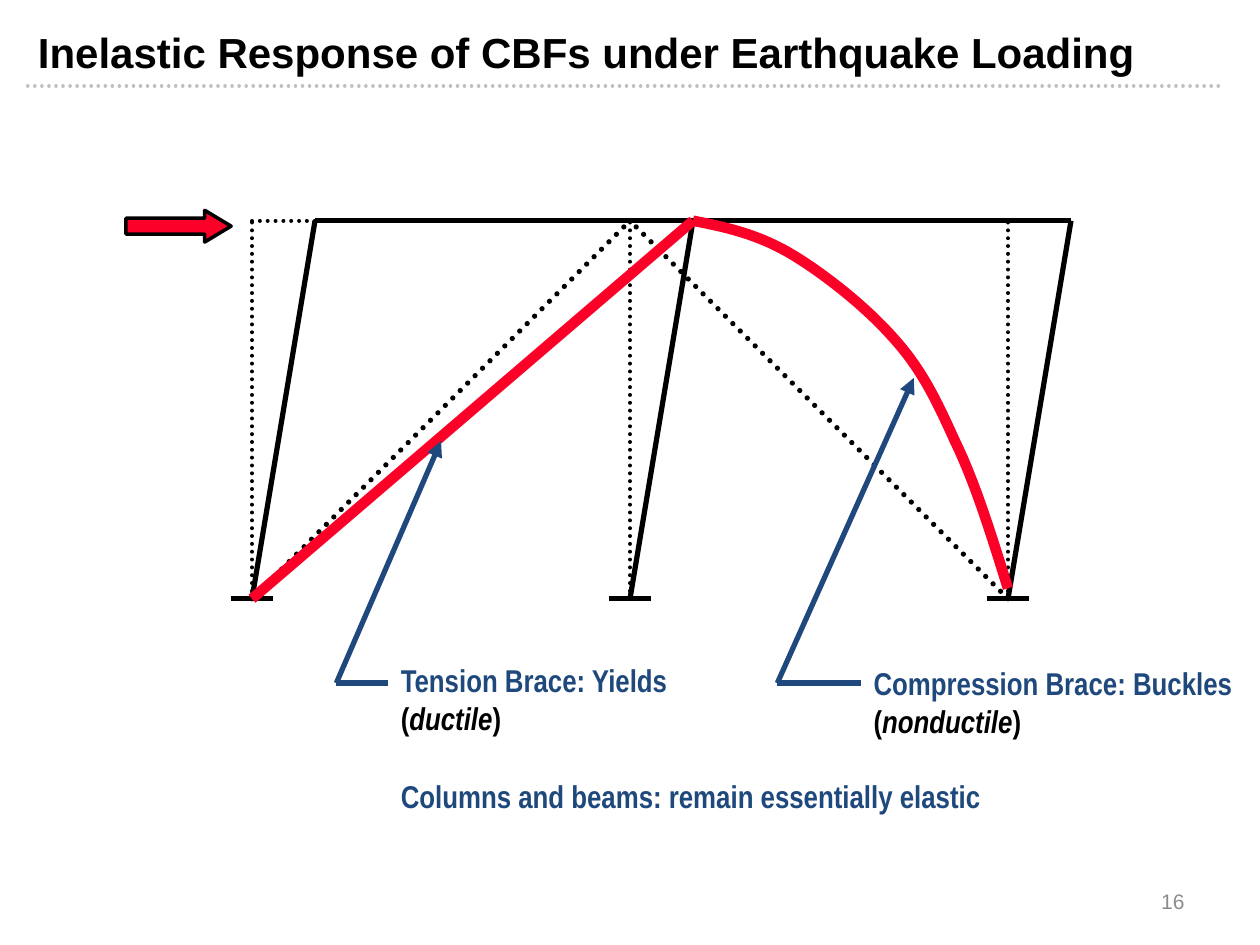
"""Build a slide on the inelastic response of braced frames to earthquakes."""
from lxml import etree
from pptx import Presentation
from pptx import util as u
from pptx.dml.color import RGBColor
from pptx.enum import dml, shapes, text
from pptx.oxml.ns import qn

BLACK, RED, NAVY = "000000", "FC0128", "1F497D"
LEFT, MIDDLE, RIGHT = COLUMNS = (5.08, 12.7, 20.32)
BEAM, BASE, DRIFT, LABEL = 4.45, 12.07, 1.27, 13.77
colour = RGBColor.from_string


def add_line(page, start, end, hue=BLACK, width=3, dotted=False, arrow=False):
    line = page.shapes.add_connector(
        shapes.MSO_CONNECTOR.STRAIGHT, *(u.Cm(value) for value in start + end))
    line.line.color.rgb = colour(hue)
    line.line.width = u.Pt(width)
    properties = line._element.spPr
    outline = line.line._get_or_add_ln()
    if dotted:
        line.line.dash_style = dml.MSO_LINE.ROUND_DOT
        outline.set("cap", "rnd")
    if arrow:
        etree.SubElement(outline, qn("a:headEnd"), type="triangle")
    etree.SubElement(properties, qn("a:effectLst"))


def add_span(para, words, size=18, font="Arial Narrow", hue=NAVY, bold=True, italic=False):
    span = para.add_run()
    span.text = words
    span.font.size = u.Pt(size)
    span.font.name = font
    span.font.bold = bold
    span.font.italic = italic
    span.font.color.rgb = colour(hue)


deck = Presentation()
deck.slide_width, deck.slide_height = u.Cm(25.4), u.Cm(19.05)
page = deck.slides.add_slide(deck.slide_layouts[5])

title = page.shapes.title
title.left, title.top, title.width, title.height = u.Cm(0.51), u.Cm(0.41), u.Cm(22.81), u.Cm(1.12)
title.text_frame.auto_size = text.MSO_AUTO_SIZE.NONE
title.text_frame.vertical_anchor = text.MSO_ANCHOR.TOP
title.text_frame.paragraphs[0].alignment = text.PP_ALIGN.LEFT
add_span(title.text_frame.paragraphs[0], "Inelastic Response of CBFs under Earthquake Loading",
         size=24, font="Arial", hue=BLACK)
add_line(page, (0.56, 1.73), (24.69, 1.73), hue="BFBFBF", width=2, dotted=True)

for column in COLUMNS:
    add_line(page, (column, BASE), (column, BEAM), width=2.25, dotted=True)
for start, end in zip(COLUMNS, COLUMNS[1:]):
    add_line(page, (start, BEAM), (end, BEAM), width=2.25, dotted=True)
for column in COLUMNS:
    add_line(page, (column - 0.43, BASE), (column + 0.43, BASE))
for column in (LEFT, RIGHT):
    add_line(page, (column, BASE), (MIDDLE, BEAM), dotted=True)

load = page.shapes.add_shape(
    shapes.MSO_SHAPE.RIGHT_ARROW, u.Cm(2.54), u.Cm(4.24), u.Cm(2.12), u.Cm(0.64))
load.adjustments[1] = 0.83
load.shadow.inherit = False
load.fill.solid()
load.fill.fore_color.rgb = colour(RED)
load.line.color.rgb = colour(BLACK)
load.line.width = u.Pt(2)

add_line(page, (LEFT + DRIFT, BEAM), (RIGHT + DRIFT, BEAM))
for column in COLUMNS:
    add_line(page, (column, BASE), (column + DRIFT, BEAM))
add_line(page, (LEFT, BASE), (MIDDLE + DRIFT, BEAM), hue=RED, width=6)

curve = [(14.58, 4.57), (15.21, 4.7), (15.88, 5.08),
         (16.54, 5.46), (17.42, 6.15), (17.98, 6.78),
         (18.57, 7.42), (18.87, 8.05), (19.25, 8.89),
         (19.66, 9.73), (19.99, 10.8), (RIGHT, 11.86)]
builder = page.shapes.build_freeform(u.Cm(MIDDLE + DRIFT), u.Cm(BEAM))
builder.add_line_segments([(u.Cm(x), u.Cm(y)) for x, y in curve], close=False)
buckled = builder.convert_to_shape()
segments = list(buckled._element.iter(qn("a:lnTo")))
for first in range(0, len(segments), 3):
    bezier = etree.Element(qn("a:cubicBezTo"))
    segments[first].addprevious(bezier)
    for segment in segments[first:first + 3]:
        bezier.append(segment[0])
        segment.getparent().remove(segment)
buckled.shadow.inherit = False
buckled.fill.background()
buckled.line.color.rgb = colour(RED)
buckled.line.width = u.Pt(6)

for tip, elbow, end in (((8.89, 8.89), 6.78, 7.83), ((18.42, 7.62), 15.67, 17.36)):
    add_line(page, tip, (elbow, LABEL), hue=NAVY, arrow=True)
    add_line(page, (elbow, LABEL), (end, LABEL), hue=NAVY)

labels = [
    (7.83, 13.21, 6.78, 1.78, "Tension Brace: Yields", "ductile"),
    (17.36, 13.26, 8.04, 1.78, "Compression Brace: Buckles", "nonductile"),
    (7.83, 15.54, 14.4, 1.02, "Columns and beams: remain essentially elastic", None),
]
for left, top, width, height, words, behaviour in labels:
    box = page.shapes.add_textbox(u.Cm(left), u.Cm(top), u.Cm(width), u.Cm(height))
    box.text_frame.word_wrap = True
    para = box.text_frame.paragraphs[0]
    add_span(para, words)
    if behaviour:
        para.add_line_break()
        add_span(para, "(", hue=BLACK)
        add_span(para, behaviour, hue=BLACK, italic=True)
        add_span(para, ")", hue=BLACK)

number = page.shapes.add_textbox(u.Cm(18.21), u.Cm(17.65), u.Cm(5.92), u.Cm(1.02))
number.text_frame.word_wrap = True
number.text_frame.vertical_anchor = text.MSO_ANCHOR.MIDDLE
number.text_frame.paragraphs[0].alignment = text.PP_ALIGN.RIGHT
add_span(number.text_frame.paragraphs[0], "16", size=12, font="Arial", hue="8C8C8C", bold=False)

deck.save("out.pptx")
